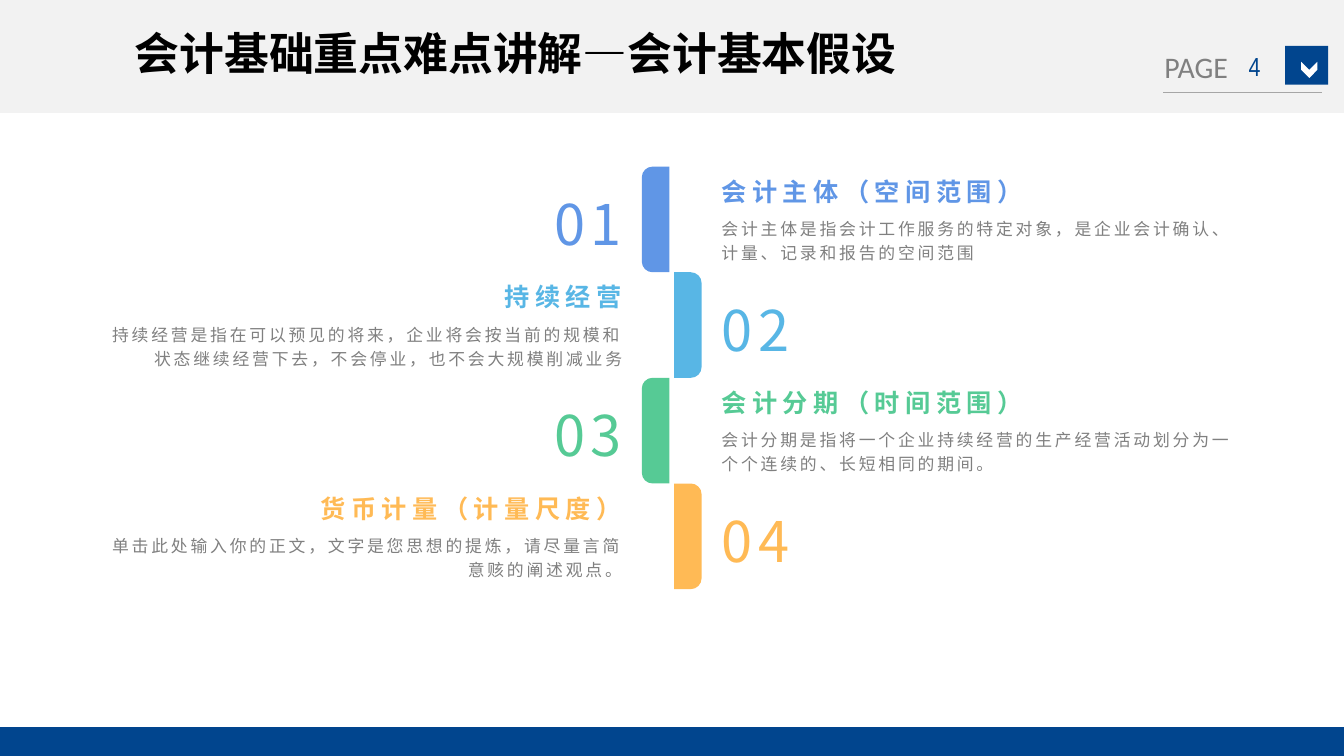
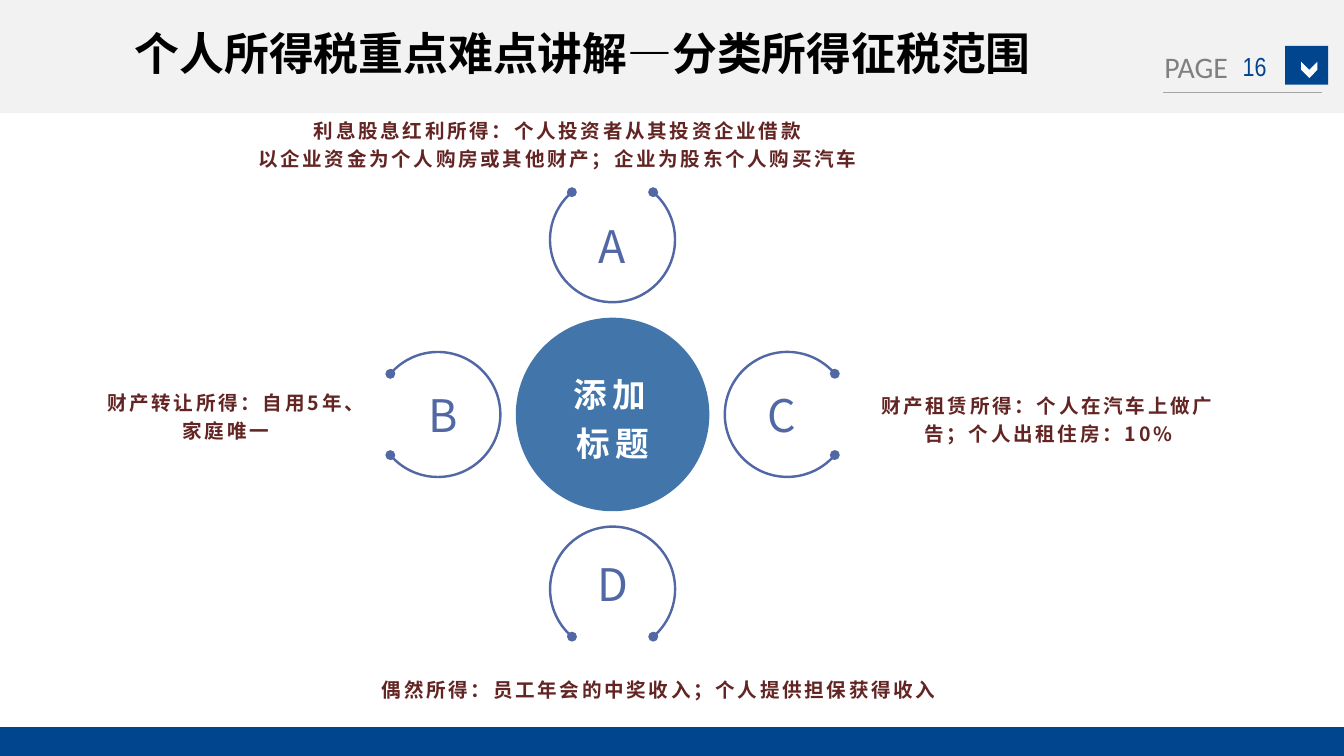
"""Build two accounting lecture slides on a grid of 100 columns."""
from math import cos, radians, sin, tan

from lxml import etree
from pptx import Presentation
from pptx.dml.color import RGBColor
from pptx.enum.shapes import MSO_CONNECTOR, MSO_SHAPE
from pptx.enum.text import MSO_ANCHOR, PP_ALIGN
from pptx.oxml.ns import qn
from pptx.util import Inches, Pt

RECT, OVAL, CHEVRON = MSO_SHAPE.RECTANGLE, MSO_SHAPE.OVAL, MSO_SHAPE.CHEVRON
STRAIGHT = MSO_CONNECTOR.STRAIGHT
LEFT, MID, RIGHT = PP_ALIGN.LEFT, PP_ALIGN.CENTER, PP_ALIGN.RIGHT
TOP, CENTER = MSO_ANCHOR.TOP, MSO_ANCHOR.MIDDLE

WIDE, HIGH = 10, 5.625
COLS, ROWS = 100, 56.25
CJK = "Noto Sans CJK SC"
HEX = {
    "band": "F2F2F2", "navy": "01458E", "gray": "808080", "rule": "A6A6A6",
    "white": "FFFFFF", "black": "000000", "blue": "6096E6", "sky": "58B6E5",
    "green": "56CA95", "gold": "FFBA55", "hub": "4276AA", "ring": "5268A5",
    "wine": "632523",
}

STEPS = [
    ("blue", "会计主体（空间范围）",
     "会计主体是指会计工作服务的特定对象，是企业会计确认、计量、记录和报告的空间范围"),
    ("sky", "持续经营",
     "持续经营是指在可以预见的将来，企业将会按当前的规模和状态继续经营下去，不会停业，也不会大规模削减业务"),
    ("green", "会计分期（时间范围）",
     "会计分期是指将一个企业持续经营的生产经营活动划分为一个个连续的、长短相同的期间。"),
    ("gold", "货币计量（计量尺度）",
     "单击此处输入你的正文，文字是您思想的提炼，请尽量言简意赅的阐述观点。"),
]

INCOME = [
    ("A", -90, (13.3, 7.8, 56.4, 5.6),
     "利息股息红利所得：个人投资者从其投资企业借款\n"
     "以企业资金为个人购房或其他财产；企业为股东个人购买汽车"),
    ("B", 180, (6.9, 28.05, 19.8, 5.6), "财产转让所得：自用5年、家庭唯一"),
    ("C", 0, (64.25, 28.05, 27.5, 6),
     "财产租赁所得：个人在汽车上做广告；个人出租住房：10%"),
    ("D", 90, (24.4, 48.05, 49.3, 6.2),
     "偶然所得：员工年会的中奖收入；个人提供担保获得收入"),
]


def unit(n):
    """Turn grid columns into a length."""
    return Inches(n * WIDE / COLS)


def color(name):
    """Look up a colour."""
    return RGBColor.from_string(HEX[name])


def paint(shape, fill):
    """Give a shape a flat fill."""
    shape.shadow.inherit = False
    shape.fill.solid()
    shape.fill.fore_color.rgb = color(fill)
    shape.line.fill.background()
    return shape


def block(slide, kind, box, fill):
    """Add a preset shape."""
    return paint(slide.shapes.add_shape(kind, *map(unit, box)), fill)


def polar(x, y, r, turn):
    """Find the point at an angle in degrees around a centre."""
    return x + r * cos(radians(turn)), y + r * sin(radians(turn))


def arc(x, y, r, start, end):
    """List the start, then the curve points, of an arc cut at each quarter."""
    low, high = sorted((start, end))
    cuts = [low, *(q for q in range(-360, 1081, 90) if low < q < high), high]
    if end < start:
        cuts.reverse()
    dots = [polar(x, y, r, start)]
    for a, b in zip(cuts, cuts[1:]):
        pull = 4 / 3 * tan(radians(b - a) / 4) * r
        dots += [polar(*polar(x, y, r, a), pull, a + 90),
                 polar(*polar(x, y, r, b), pull, b - 90),
                 polar(x, y, r, b)]
    return dots


def outline(slide, parts, fill):
    """Join points and arcs, each a list, into one closed shape."""
    dots = [tuple(map(unit, dot)) for part in parts for dot in part]
    pen = slide.shapes.build_freeform(*dots[0])
    pen.add_line_segments(dots[1:], close=True)
    shape = paint(pen.convert_to_shape(), fill)
    nodes = list(next(shape._element.iter(qn("a:path"))))
    at = 0
    for part in parts:
        for i in range(at + 1, at + len(part), 3):
            curve = etree.Element(qn("a:cubicBezTo"))
            nodes[i].addprevious(curve)
            for node in nodes[i:i + 3]:
                curve.append(node[0])
                node.getparent().remove(node)
        at += len(part)
    return shape


def text(slide, words, box=None, shape=None, size=9, font=CJK, ink="gray",
         bold=False, gap=0, align=LEFT, anchor=TOP, lead=None, after=None,
         foot=0.5, wrap=True):
    """Write text into a shape or a new text box."""
    shape = shape or slide.shapes.add_textbox(*map(unit, box))
    frame = shape.text_frame
    frame.word_wrap = wrap
    frame.vertical_anchor = anchor
    frame.margin_bottom = unit(foot)
    for i, line in enumerate(words.split("\n")):
        para = frame.add_paragraph() if i else frame.paragraphs[0]
        para.alignment = align
        if lead:
            para.line_spacing = lead
        if after:
            para.space_after = Pt(after)
        run = para.add_run()
        run.text = line
        run.font.size = Pt(size)
        run.font.name = font
        run.font.bold = bold
        run.font.color.rgb = color(ink)
        props = run.font._element
        etree.SubElement(props, qn("a:ea")).set("typeface", font)
        if gap:
            props.set("spc", str(int(gap * 100)))


def rule(slide, x, y, end):
    """Draw a thin level line."""
    line = slide.shapes.add_connector(STRAIGHT, *map(unit, (x, y, end, y)))
    line.line.color.rgb = color("rule")
    line.line.width = Pt(0.75)
    etree.SubElement(line._element.spPr, qn("a:effectLst"))


def base(deck, title, page):
    """Start a slide with its bands, title and page mark."""
    slide = deck.slides.add_slide(deck.slide_layouts[6])
    block(slide, RECT, (0, 0, COLS, 8.4), "band")
    block(slide, RECT, (0, 54.1, COLS, ROWS - 54.1), "navy")
    text(slide, "PAGE", (85.65, 3.15, 6.8, 3.7), size=16, font="Calibri",
         wrap=False)
    block(slide, RECT, (95.62, 3.42, 3.2, 2.88), "navy")
    block(slide, CHEVRON, (96.82, 4.6, 1.2, 1.2), "white").rotation = 90
    rule(slide, 86.55, 6.9, 98.4)
    text(slide, page, (90.95, 3.4, 4.8, 3), size=14, font="Arial Narrow",
         ink="navy", align=MID, anchor=CENTER)
    text(slide, title, (9.03, 1.4, 79.2, 5), size=24, ink="black", bold=True)
    return slide


def tab(slide, y, high, left, ink):
    """Draw a tab with two round corners on its outer side."""
    r, far = 0.8, 1.25
    edge, side = (49.8, -1) if left else (50.15, 1)
    parts = [[(0, 0)], arc(far, r, r, -90, 0),
             arc(far, high - r, r, 0, 90), [(0, high)]]
    outline(slide, [[(edge + side * x, y + v) for x, v in part]
                    for part in parts], ink)


def step(slide, i, ink, head, body):
    """Draw one row of the ladder, with sides taking turns."""
    high = 7.86
    y = 12.4 + i * high
    left = i % 2 == 0
    near, away = (52.7, 5.95) if left else (5.95, 52.7)
    side, other = (LEFT, RIGHT) if left else (RIGHT, LEFT)
    tab(slide, y, high, left, ink)
    style = {"ink": ink, "gap": 3, "anchor": CENTER, "foot": 0}
    text(slide, f"{i + 1:02}", (away, y + 1, 41.3, 5.9), size=30,
         align=other, **style)
    text(slide, head, (near, y + 0.1, 41.3, 2.95), size=13.5, bold=True,
         align=side, **style)
    text(slide, body, (near, y + 3.08, 41.3, 4.7), gap=1.5, align=side,
         lead=1.2, after=10)


def ring(slide, x, y, turn):
    """Draw a ring open at the top, with a dot at each end, and turn it."""
    r, half, dot, gap = 4.65, 0.09, 0.37, 40.5
    start, end = gap - 90, 270 - gap
    y -= 0.42
    first, last = polar(x, y, r, start), polar(x, y, r, end)
    shape = outline(slide, [
        arc(x, y, r + half, start + 4.5, end - 4.5),
        arc(*last, dot, end - 76, end + 256),
        arc(x, y, r - half, end - 4.5, start + 4.5),
        arc(*first, dot, start + 104, start + 436),
    ], "ring")
    shape.rotation = turn


def wheel(slide, x, y):
    """Draw the hub with its rings and notes."""
    r = 7.2
    hub = block(slide, OVAL, (x - r, y - r, 2 * r, 2 * r), "hub")
    text(slide, "添加标题", shape=hub, size=18, ink="white", bold=True, gap=3,
         align=MID, anchor=CENTER, lead=1.2)
    for mark, turn, box, note in INCOME:
        cx, cy = polar(x, y, 12.58, turn)
        ring(slide, cx, cy, turn + 90)
        text(slide, mark, (cx - 2.8, cy - 2.75, 5.6, 5.5), size=24, ink="ring",
             align=MID, anchor=CENTER)
        text(slide, note, box, size=10.5, ink="wine", bold=True, gap=1.5,
             align=MID, anchor=CENTER, lead=1.2)


def main():
    """Build and save the deck."""
    deck = Presentation()
    deck.slide_width, deck.slide_height = Inches(WIDE), Inches(HIGH)
    slide = base(deck, "会计基础重点难点讲解—会计基本假设", "4")
    for i, row in enumerate(STEPS):
        step(slide, i, *row)
    slide = base(deck, "个人所得税重点难点讲解—分类所得征税范围", "16")
    wheel(slide, 45.58, 30.84)
    deck.save("out.pptx")


if __name__ == "__main__":
    main()
